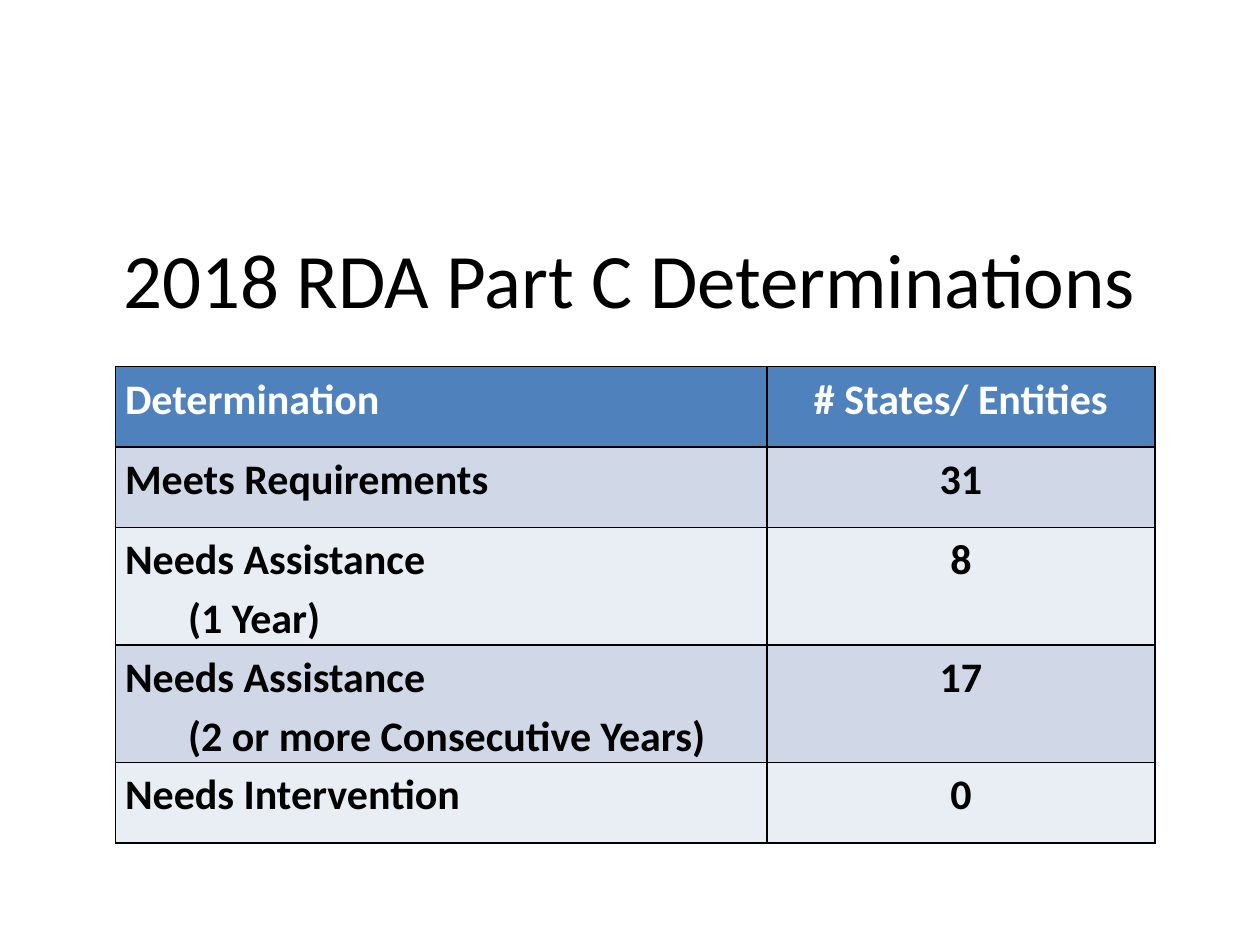
from pptx import Presentation
from pptx.dml.color import RGBColor
from pptx.enum.text import MSO_ANCHOR, PP_ALIGN
from pptx.oxml import parse_xml
from pptx.oxml.ns import nsdecls
from pptx.util import Cm, Pt

LEFT, CENTER = PP_ALIGN.LEFT, PP_ALIGN.CENTER
MIDDLE = MSO_ANCHOR.MIDDLE

BLACK = RGBColor(0x00, 0x00, 0x00)
WHITE = RGBColor(0xFF, 0xFF, 0xFF)
HEADER_BLUE = RGBColor(0x4F, 0x81, 0xBD)
BAND_DARK = RGBColor(0xD0, 0xD8, 0xE8)
BAND_LIGHT = RGBColor(0xE9, 0xED, 0xF4)
FONT = "Calibri"

DETERMINATIONS = [
    ("Determination", "# States/ Entities"),
    ("Meets Requirements", "31"),
    ("Needs Assistance\n(1 Year)", "8"),
    ("Needs Assistance\n(2 or more Consecutive Years)", "17"),
    ("Needs Intervention", "0"),
]
COLUMN_WIDTHS = (Cm(13.13), Cm(7.82))
SINGLE_ROW, DOUBLE_ROW = Cm(1.62), Cm(2.37)


def style_font(font, size, color, bold=False):
    font.name = FONT
    font.size = Pt(size)
    font.bold = bold
    font.color.rgb = color


def add_title(slide, left, top, width, height, text):
    text_frame = slide.shapes.add_textbox(left, top, width, height).text_frame
    text_frame.word_wrap = True
    text_frame.vertical_anchor = MIDDLE
    text_frame.text = text
    paragraph = text_frame.paragraphs[0]
    paragraph.alignment = CENTER
    style_font(paragraph.runs[0].font, 44, BLACK)


def add_cell_borders(cell):
    """Draw thin black lines on all sides; they must precede the fill."""
    properties = cell._tc.get_or_add_tcPr()
    for position, side in enumerate(("lnL", "lnR", "lnT", "lnB")):
        properties.insert(position, parse_xml(
            f'<a:{side} {nsdecls("a")} w="12700"><a:solidFill>'
            f'<a:srgbClr val="{BLACK}"/></a:solidFill></a:{side}>'))


def fill_cell(cell, text, alignment, fill, color):
    """Write the text; every line after the first is indented."""
    cell.margin_left = cell.margin_right = Cm(0.19)
    cell.margin_top = cell.margin_bottom = 0
    cell.fill.solid()
    cell.fill.fore_color.rgb = fill
    add_cell_borders(cell)
    cell.text_frame.text = text
    for index, paragraph in enumerate(cell.text_frame.paragraphs):
        paragraph.alignment = alignment
        paragraph.line_spacing = 1.15
        if index:
            paragraph._p.get_or_add_pPr().set("marL", str(Cm(1.27)))
        style_font(paragraph.runs[0].font, 24, color, bold=True)


def add_determinations_table(slide, left, top, rows):
    heights = [DOUBLE_ROW if "\n" in row[0] else SINGLE_ROW for row in rows]
    table = slide.shapes.add_table(
        len(rows), len(COLUMN_WIDTHS), left, top,
        sum(COLUMN_WIDTHS), sum(heights)).table
    for column, width in zip(table.columns, COLUMN_WIDTHS):
        column.width = width
    for index, (row, height) in enumerate(zip(rows, heights)):
        table.rows[index].height = height
        if index == 0:
            fill, color = HEADER_BLUE, WHITE
        else:
            fill, color = (BAND_DARK if index % 2 else BAND_LIGHT), BLACK
        for cell, text, alignment in zip(table.rows[index].cells, row, (LEFT, CENTER)):
            fill_cell(cell, text, alignment, fill, color)


def main():
    presentation = Presentation()
    presentation.slide_width, presentation.slide_height = Cm(25.4), Cm(19.05)
    slide = presentation.slides.add_slide(presentation.slide_layouts[6])
    add_title(slide, Cm(1.27), Cm(4.65), Cm(22.86), Cm(1.9),
              "2018 RDA Part C Determinations")
    add_determinations_table(slide, Cm(2.33), Cm(7.39), DETERMINATIONS)
    presentation.save("out.pptx")


if __name__ == "__main__":
    main()
